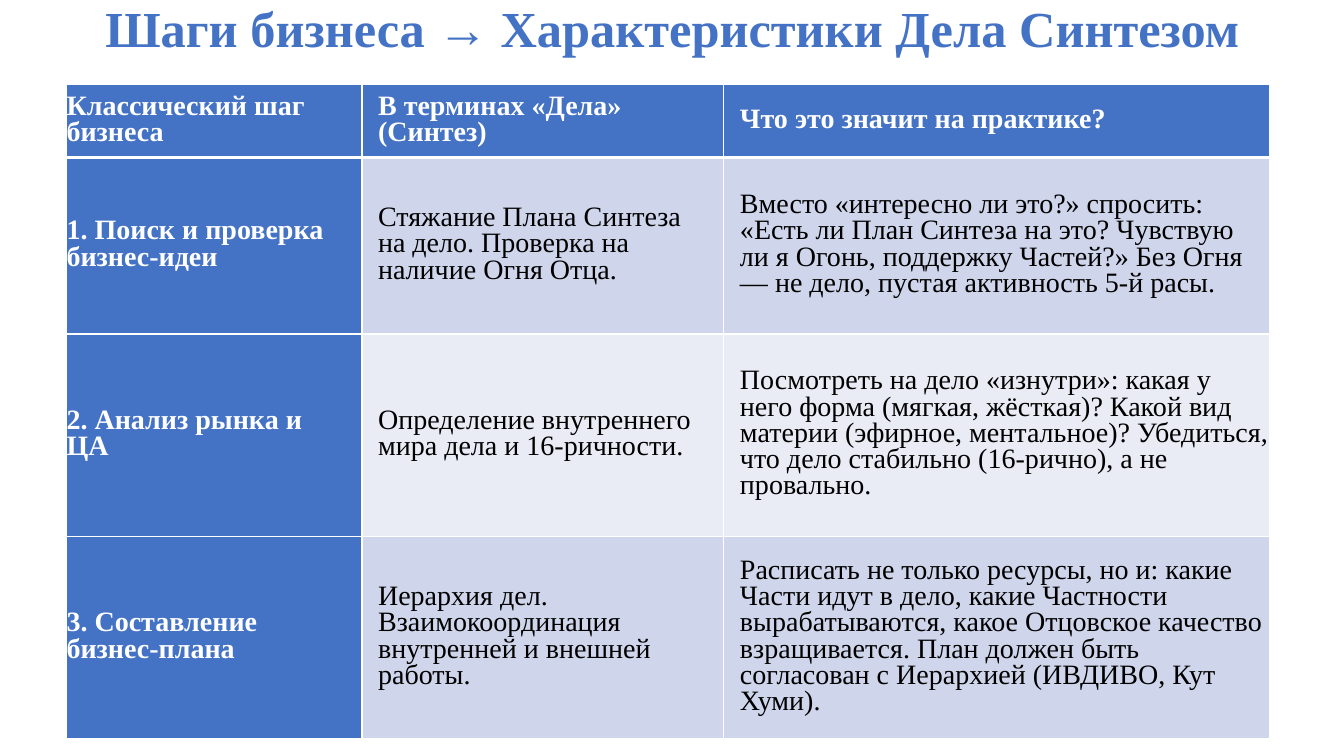
from lxml import etree
from pptx import Presentation
from pptx import util as u
from pptx.dml.color import RGBColor
from pptx.enum import text
from pptx.oxml.ns import qn

COLORS = {"blue": "4472C4", "white": "FFFFFF", "black": "000000",
          "band_dark": "CFD5EA", "band_light": "E9EBF5"}
GRID_COLUMNS, GRID_ROWS = 133.3, 75
TITLE = "Шаги бизнеса → Характеристики Дела Синтезом"
COLUMN_WIDTHS = [29.3, 35.9, 54.1]
ROW_HEIGHTS = [7.2, 17.5, 20.1, 20.1]
STEPS = [
    ["Классический шаг бизнеса", "В терминах «Дела» (Синтез)",
     "Что это значит на практике?"],
    ["1. Поиск и проверка бизнес-идеи",
     "Стяжание Плана Синтеза на дело. Проверка на наличие Огня Отца.",
     "Вместо «интересно ли это?» спросить: «Есть ли План Синтеза на это? "
     "Чувствую ли я Огонь, поддержку Частей?» Без Огня — не дело, "
     "пустая активность 5-й расы."],
    ["2. Анализ рынка и ЦА",
     "Определение внутреннего мира дела и 16-ричности.",
     "Посмотреть на дело «изнутри»: какая у него форма (мягкая, жёсткая)? "
     "Какой вид материи (эфирное, ментальное)? Убедиться, что дело "
     "стабильно (16-рично), а не провально."],
    ["3. Составление бизнес-плана",
     "Иерархия дел. Взаимокоординация внутренней и внешней работы.",
     "Расписать не только ресурсы, но и: какие Части идут в дело, какие "
     "Частности вырабатываются, какое Отцовское качество взращивается. "
     "План должен быть согласован с Иерархией (ИВДИВО, Кут Хуми)."],
]


class SlideBuilder:
    """Draws styled elements on one slide using grid columns and rows."""

    def __init__(self, presentation):
        self.column = presentation.slide_width / GRID_COLUMNS
        self.row = presentation.slide_height / GRID_ROWS
        self.slide = presentation.slides.add_slide(presentation.slide_layouts[6])

    def across(self, columns):
        return u.Emu(round(columns * self.column))

    def down(self, rows):
        return u.Emu(round(rows * self.row))

    def box(self, left, top, width, height):
        return (self.across(left), self.down(top),
                self.across(width), self.down(height))

    def apply(self, target, values):
        for name, value in values.items():
            setattr(target, name, value)

    def add_words(self, paragraph, words, size, color, bold, **layout):
        run = paragraph.add_run()
        run.text = words
        self.apply(run.font, {"name": "Times New Roman", "size": u.Pt(size),
                              "bold": bold})
        run.font.color.rgb = RGBColor.from_string(COLORS[color])
        self.apply(paragraph, layout)

    def title(self, words, left, top, width, height, bottom):
        shape = self.slide.shapes.add_textbox(*self.box(left, top, width, height))
        self.apply(shape.text_frame, {
            "word_wrap": True, "vertical_anchor": text.MSO_ANCHOR.MIDDLE,
            "margin_bottom": self.down(bottom)})
        self.add_words(shape.text_frame.paragraphs[0], words, 36, "blue", True,
                       alignment=text.PP_ALIGN.CENTER, line_spacing=0.9)

    def borders(self, cell, header):
        properties = cell._tc.get_or_add_tcPr()
        for index, side in enumerate("LRTB"):
            points = 3 if header and side == "B" else 1
            line = etree.Element(qn(f"a:ln{side}"), w=str(u.Pt(points)))
            fill = etree.SubElement(line, qn("a:solidFill"))
            etree.SubElement(fill, qn("a:srgbClr"), val=COLORS["white"])
            properties.insert(index, line)

    def cell(self, cell, words, row, column):
        header = row == 0
        strong = header or column == 0
        band = "band_dark" if row % 2 else "band_light"
        flush_right = column == 2 and not header
        self.apply(cell, {
            "vertical_anchor": text.MSO_ANCHOR.MIDDLE,
            "margin_left": self.across(1.6 if column else 0),
            "margin_right": self.across(0 if flush_right else 1.6),
            "margin_top": self.down(1), "margin_bottom": self.down(1)})
        cell.fill.solid()
        cell.fill.fore_color.rgb = RGBColor.from_string(
            COLORS["blue" if strong else band])
        self.borders(cell, header)
        self.add_words(cell.text_frame.paragraphs[0], words, 20,
                       "white" if strong else "black", strong,
                       line_spacing=u.Pt(18.8))

    def table(self, rows, left, top, widths, heights):
        table = self.slide.shapes.add_table(
            len(rows), len(widths),
            *self.box(left, top, sum(widths), sum(heights))).table
        for column, width in zip(table.columns, widths):
            column.width = self.across(width)
        for row, height in zip(table.rows, heights):
            row.height = self.down(height)
        for row, entries in enumerate(rows):
            for column, words in enumerate(entries):
                self.cell(table.cell(row, column), words, row, column)


def main():
    presentation = Presentation()
    presentation.slide_width = u.Inches(13.33)
    presentation.slide_height = u.Inches(7.5)
    builder = SlideBuilder(presentation)
    builder.title(TITLE, 9.2, -3, 115, 17.8, bottom=6.2)
    builder.table(STEPS, 6.6, 8.4, COLUMN_WIDTHS, ROW_HEIGHTS)
    presentation.save("out.pptx")


if __name__ == "__main__":
    main()
